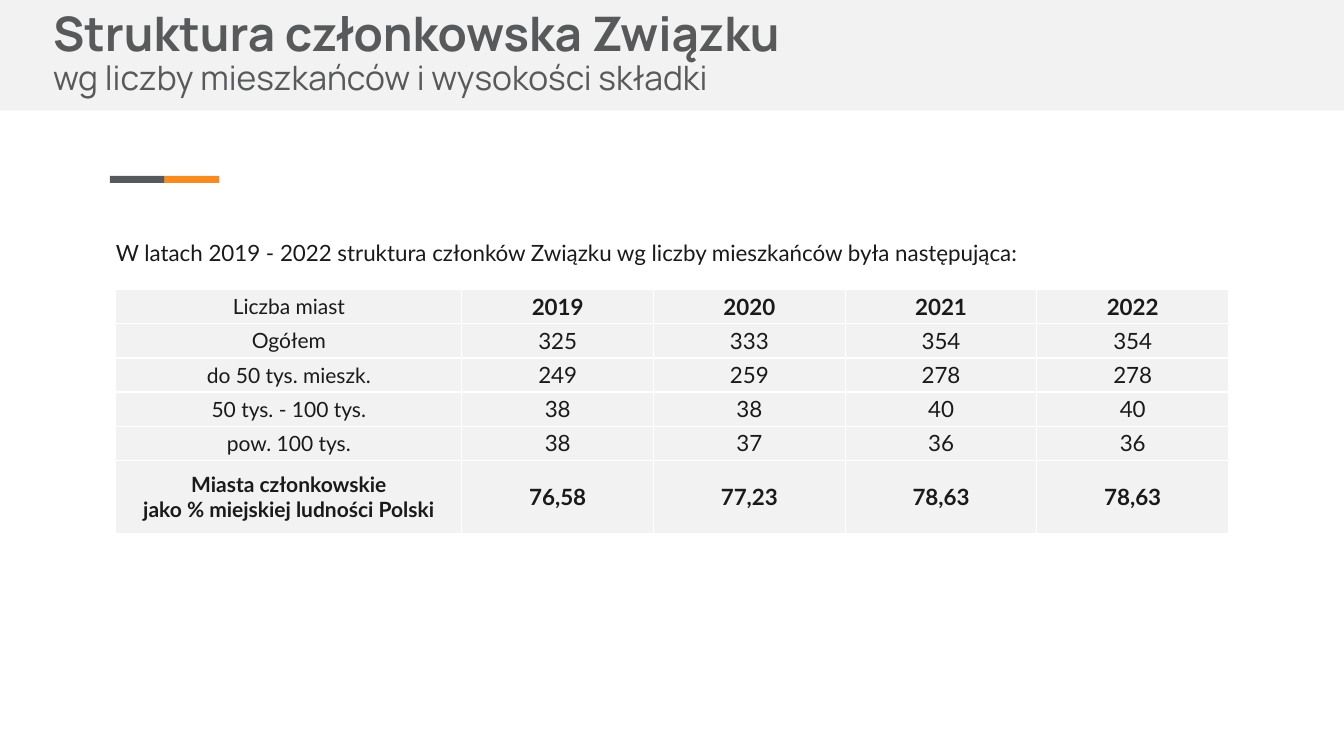
import pptx
import pptx.dml.color
import pptx.enum.shapes
import pptx.enum.text
import pptx.oxml
import pptx.oxml.ns
import pptx.util
from pptx.util import Cm

GREY, ORANGE, PALE, INK, WHITE = "58595B", "F68B1F", "F2F2F2", "1A1A1A", "FFFFFF"
ANCHOR = pptx.enum.text.MSO_ANCHOR
ALIGN = pptx.enum.text.PP_ALIGN
MEMBERSHIP = [
    ("Liczba miast", "2019", "2020", "2021", "2022"),
    ("Ogółem", "325", "333", "354", "354"),
    ("do 50 tys. mieszk.", "249", "259", "278", "278"),
    ("50 tys. - 100 tys.", "38", "38", "40", "40"),
    ("pow. 100 tys.", "38", "37", "36", "36"),
    ("Miasta członkowskie\njako % miejskiej ludności Polski",
     "76,58", "77,23", "78,63", "78,63"),
]


def color(hex_value):
    return pptx.dml.color.RGBColor.from_string(hex_value)


def set_attributes(target, values):
    for name, value in values.items():
        setattr(target, name, value)


def write_lines(paragraph, lines, formats):
    """Write lines parted by line breaks, each with its own font format."""
    for index, (line, font_format) in enumerate(zip(lines, formats)):
        if index:
            paragraph.add_line_break()
        run = paragraph.add_run()
        run.text = line
        values = dict(font_format)
        run.font.color.rgb = color(values.pop("color"))
        set_attributes(run.font, values)


def add_rectangle(slide, left, top, width, height, fill):
    rectangle = slide.shapes.add_shape(
        pptx.enum.shapes.MSO_SHAPE.RECTANGLE, left, top, width, height)
    rectangle.shadow.inherit = False
    rectangle.fill.solid()
    rectangle.fill.fore_color.rgb = color(fill)
    rectangle.line.fill.background()


def add_header(slide, left, top, width, height):
    add_rectangle(slide, left, top, width, height, PALE)
    title = slide.shapes.title
    title.element.getparent().append(title.element)
    set_attributes(title, {"left": left + Cm(1.09), "top": top,
                           "width": Cm(28.47), "height": Cm(2.51)})
    margins = dict.fromkeys(
        ("margin_left", "margin_top", "margin_right", "margin_bottom"), Cm(0.25))
    set_attributes(title.text_frame, {
        **margins, "word_wrap": True, "vertical_anchor": ANCHOR.TOP,
        "auto_size": pptx.enum.text.MSO_AUTO_SIZE.NONE})
    paragraph = title.text_frame.paragraphs[0]
    set_attributes(paragraph, {"alignment": ALIGN.LEFT, "line_spacing": 0.9})
    base = {"name": "Manrope", "color": GREY}
    write_lines(
        paragraph,
        ["Struktura członkowska Związku", "wg liczby mieszkańców i wysokości składki"],
        [{**base, "size": pptx.util.Pt(34), "bold": True},
         {**base, "size": pptx.util.Pt(24), "bold": False}])


def add_accent(slide, left, top, width, height):
    half = width // 2
    for index, fill in enumerate((GREY, ORANGE)):
        add_rectangle(slide, left + index * half, top, half, height, fill)


def add_introduction(slide, left, top, width, height):
    frame = slide.shapes.add_textbox(left, top, width, height).text_frame
    frame.word_wrap = True
    write_lines(
        frame.paragraphs[0],
        ["W latach 2019 - 2022 struktura członków Związku wg liczby mieszkańców "
         "była następująca:"],
        [{"name": "Lato", "size": pptx.util.Pt(16), "color": INK}])


def add_borders(cell):
    properties = cell._tc.get_or_add_tcPr()
    for index, side in enumerate(("lnL", "lnR", "lnT", "lnB")):
        properties.insert(index, pptx.oxml.parse_xml(
            f'<a:{side} {pptx.oxml.ns.nsdecls("a")} w="12700"><a:solidFill>'
            f'<a:srgbClr val="{WHITE}"/></a:solidFill></a:{side}>'))


def fill_cell(cell, text, is_label, bold):
    side_margin = Cm(0.13 if is_label else 0.08)
    set_attributes(cell, {
        "margin_left": side_margin, "margin_right": side_margin,
        "margin_top": 0, "margin_bottom": 0, "vertical_anchor": ANCHOR.MIDDLE})
    cell.fill.solid()
    cell.fill.fore_color.rgb = color(PALE)
    add_borders(cell)
    paragraph = cell.text_frame.paragraphs[0]
    paragraph.alignment = ALIGN.CENTER
    lines = text.split("\n")
    font_format = {"name": "Lato", "size": pptx.util.Pt(15 if is_label else 16),
                   "bold": bold, "color": INK}
    write_lines(paragraph, lines, [font_format] * len(lines))


def add_membership_table(slide, left, top, width, height):
    row_count, column_count = len(MEMBERSHIP), len(MEMBERSHIP[0])
    table = slide.shapes.add_table(
        row_count, column_count, left, top, width, height).table
    label_width, row_height = Cm(8.72), Cm(0.86)
    for index, column in enumerate(table.columns):
        column.width = (width - label_width) // (column_count - 1) if index else label_width
    last = row_count - 1
    for index, row in enumerate(table.rows):
        row.height = height - last * row_height if index == last else row_height
    for row_index, values in enumerate(MEMBERSHIP):
        for column_index, text in enumerate(values):
            is_label = column_index == 0
            bold = row_index == last or (row_index == 0 and not is_label)
            fill_cell(table.cell(row_index, column_index), text, is_label, bold)


def main():
    presentation = pptx.Presentation()
    set_attributes(presentation, {"slide_width": Cm(33.87), "slide_height": Cm(19.05)})
    slide = presentation.slides.add_slide(presentation.slide_layouts[5])
    add_header(slide, 0, 0, presentation.slide_width, Cm(2.79))
    add_accent(slide, Cm(2.77), Cm(4.43), Cm(2.76), Cm(0.18))
    add_membership_table(slide, Cm(2.92), Cm(7.3), Cm(28.04), Cm(6.15))
    add_introduction(slide, Cm(2.67), Cm(5.89), Cm(28.55), Cm(0.94))
    presentation.save("out.pptx")


if __name__ == "__main__":
    main()
